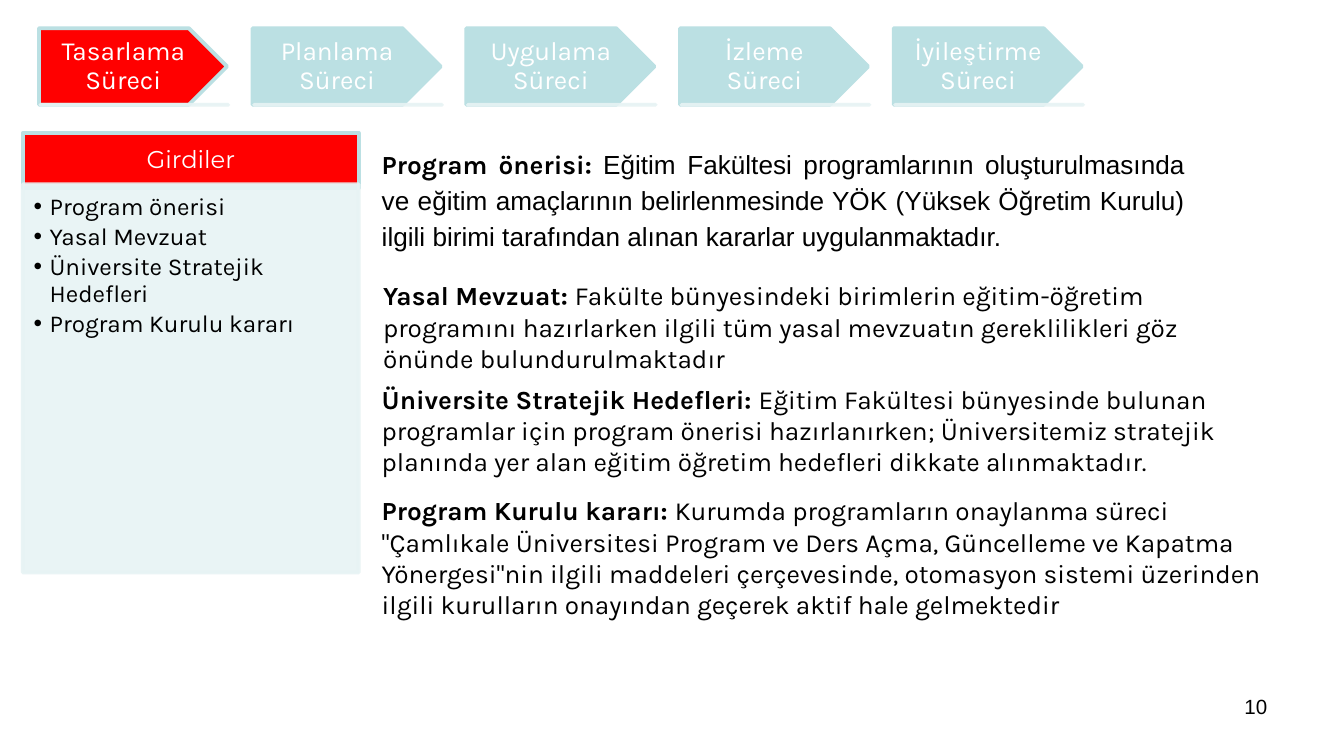
from pptx import Presentation
from pptx.dml.color import RGBColor
from pptx.enum.shapes import MSO_SHAPE
from pptx.enum.text import MSO_ANCHOR, PP_ALIGN
from pptx.oxml.ns import qn
from pptx.util import Inches, Pt
from lxml import etree

RECT, PLATE = MSO_SHAPE.RECTANGLE, MSO_SHAPE.PENTAGON
TOP, MIDDLE = MSO_ANCHOR.TOP, MSO_ANCHOR.MIDDLE
LEFT, CENTER, RIGHT, JUSTIFY = PP_ALIGN.LEFT, PP_ALIGN.CENTER, PP_ALIGN.RIGHT, PP_ALIGN.JUSTIFY

COLORS = {"active": "FF0000", "step": "BBE0E3", "pale": "E7F3F4",
          "light": "FFFFFF", "dark": "000000"}

STEPS = ["Tasarlama Süreci", "Planlama Süreci", "Uygulama Süreci",
         "İzleme Süreci", "İyileştirme Süreci"]
ACTIVE_STEP = 0
INPUTS_TITLE = "Girdiler"
INPUTS = ["Program önerisi", "Yasal Mevzuat", "Üniversite Stratejik Hedefleri",
          "Program Kurulu kararı"]

# heading, body, body font, (left, top, width, height), paragraph format
DETAILS = [
    ("Program önerisi: ",
     "Eğitim Fakültesi programlarının oluşturulmasında ve eğitim amaçlarının "
     "belirlenmesinde YÖK (Yüksek Öğretim Kurulu) ilgili birimi tarafından alınan "
     "kararlar uygulanmaktadır.",
     "Arial", (2.77, 1.03, 6.12, 1.24),
     {"alignment": JUSTIFY, "line_spacing": 1.15, "space_after": Pt(7.5)}),
    ("Yasal Mevzuat: ",
     "Fakülte bünyesindeki birimlerin eğitim-öğretim programını hazırlarken ilgili "
     "tüm yasal mevzuatın gereklilikleri göz önünde bulundurulmaktadır",
     "Karla", (2.78, 2.04, 6.12, 1.04), {}),
    ("Üniversite Stratejik Hedefleri: ",
     "Eğitim Fakültesi bünyesinde bulunan programlar için program önerisi "
     "hazırlanırken; Üniversitemiz stratejik planında yer alan eğitim öğretim "
     "hedefleri dikkate alınmaktadır.",
     "Karla", (2.77, 2.81, 6.51, 1.04), {}),
    ("Program Kurulu kararı: ",
     "Kurumda programların onaylanma süreci \"Çamlıkale Üniversitesi Program ve Ders "
     "Açma, Güncelleme ve Kapatma Yönergesi\"nin ilgili maddeleri çerçevesinde, "
     "otomasyon sistemi üzerinden ilgili kurulların onayından geçerek aktif hale "
     "gelmektedir",
     "Karla", (2.77, 3.64, 6.97, 1.04), {}),
]
PAGE_NUMBER = "10"

SLIDE_W = 10
SLIDE_H = SLIDE_W * 9 / 16
STEP_LEFT, STEP_TOP, STEP_W, STEP_H, STEP_PITCH = 0.29, 0.21, 1.4, 0.57, 1.59
PANEL_LEFT, PANEL_W = 0.17, 2.5


def rgb(name):
    return RGBColor.from_string(COLORS[name])


def set_frame(sp, insets, anchor=TOP):
    tf = sp.text_frame
    left, top, right, bottom = (Inches(v) for v in insets)
    fmt = {"word_wrap": True, "vertical_anchor": anchor, "margin_left": left,
           "margin_top": top, "margin_right": right, "margin_bottom": bottom}
    for key, value in fmt.items():
        setattr(tf, key, value)
    return tf


def set_paragraph(p, **fmt):
    for key, value in fmt.items():
        setattr(p, key, value)


def add_run(p, text, size, font="Karla", color="dark", bold=False):
    r = p.add_run()
    r.text = text
    for key, value in {"size": Pt(size), "name": font, "bold": bold}.items():
        setattr(r.font, key, value)
    r.font.color.rgb = rgb(color)


def add_box(s, kind, box, fill, line):
    sp = s.shapes.add_shape(kind, *(Inches(v) for v in box))
    sp.shadow.inherit = False
    sp.fill.solid()
    sp.fill.fore_color.rgb = rgb(fill)
    sp.line.color.rgb = rgb(line)
    sp.line.width = Pt(2)
    return sp


def add_pale_box(s, box):
    """Add a rectangle whose fill and line are 90 % opaque."""
    sp = add_box(s, RECT, box, "pale", "pale")
    for color in sp._element.spPr.iter(qn("a:srgbClr")):
        etree.SubElement(color, qn("a:alpha"), val="90000")
    return sp


def add_label(sp, text, insets, size, font):
    p = set_frame(sp, insets, MIDDLE).paragraphs[0]
    set_paragraph(p, alignment=CENTER, line_spacing=0.9)
    add_run(p, text, size, font, "light")


def add_text_box(s, box):
    sp = s.shapes.add_textbox(*(Inches(v) for v in box))
    return set_frame(sp, (0.07, 0.04, 0.07, 0.04)).paragraphs[0]


def add_bullet(p):
    pPr = p._p.get_or_add_pPr()
    pPr.set("marL", str(Inches(0.12)))
    pPr.set("indent", str(Inches(-0.12)))
    etree.SubElement(pPr, qn("a:buFont"), typeface="Arial")
    etree.SubElement(pPr, qn("a:buChar"), char="•")


def add_step(s, i, text):
    x = STEP_LEFT + i * STEP_PITCH
    sp = add_box(s, PLATE, (x, STEP_TOP, STEP_W, STEP_H),
                 "active" if i == ACTIVE_STEP else "step", "step")
    add_label(sp, text, (0.11, 0.06, 0.11, 0.06), 14, "Karla")
    add_pale_box(s, (x + 0.01, STEP_TOP + STEP_H, STEP_W, 0))


def add_inputs_panel(s):
    head = add_box(s, RECT, (PANEL_LEFT, 0.99, PANEL_W, 0.41), "active", "step")
    add_label(head, INPUTS_TITLE, (0.1, 0.06, 0.1, 0.06), 13, "Montserrat")
    body = add_pale_box(s, (PANEL_LEFT, 1.37, PANEL_W, 2.89))
    tf = set_frame(body, (0.08, 0.08, 0.1, 0.11))
    for i, text in enumerate(INPUTS):
        p = tf.add_paragraph() if i else tf.paragraphs[0]
        set_paragraph(p, alignment=LEFT, line_spacing=0.9, space_after=Pt(2))
        add_bullet(p)
        add_run(p, text, 13)


def main():
    prs = Presentation()
    prs.slide_width, prs.slide_height = Inches(SLIDE_W), Inches(SLIDE_H)
    s = prs.slides.add_slide(prs.slide_layouts[6])

    p = add_text_box(s, (7.17, 5.12, 2.33, 0.39))
    set_paragraph(p, alignment=RIGHT)
    add_run(p, PAGE_NUMBER, 11, "Arial")

    add_inputs_panel(s)
    for i, text in enumerate(STEPS):
        add_step(s, i, text)

    for heading, body, font, box, fmt in DETAILS:
        p = add_text_box(s, box)
        set_paragraph(p, **fmt)
        add_run(p, heading, 14, bold=True)
        add_run(p, body, 14, font)

    prs.save("out.pptx")


if __name__ == "__main__":
    main()
